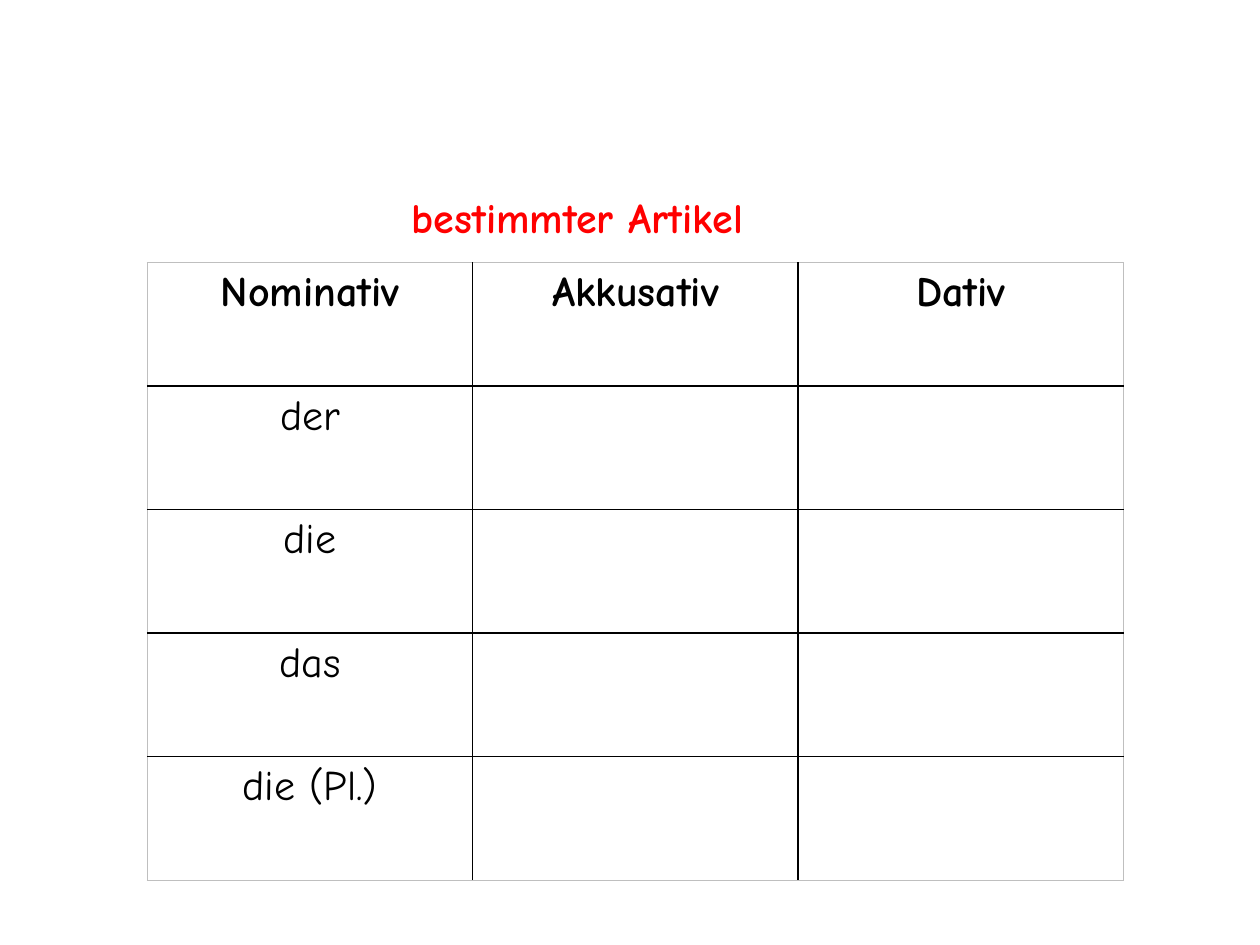
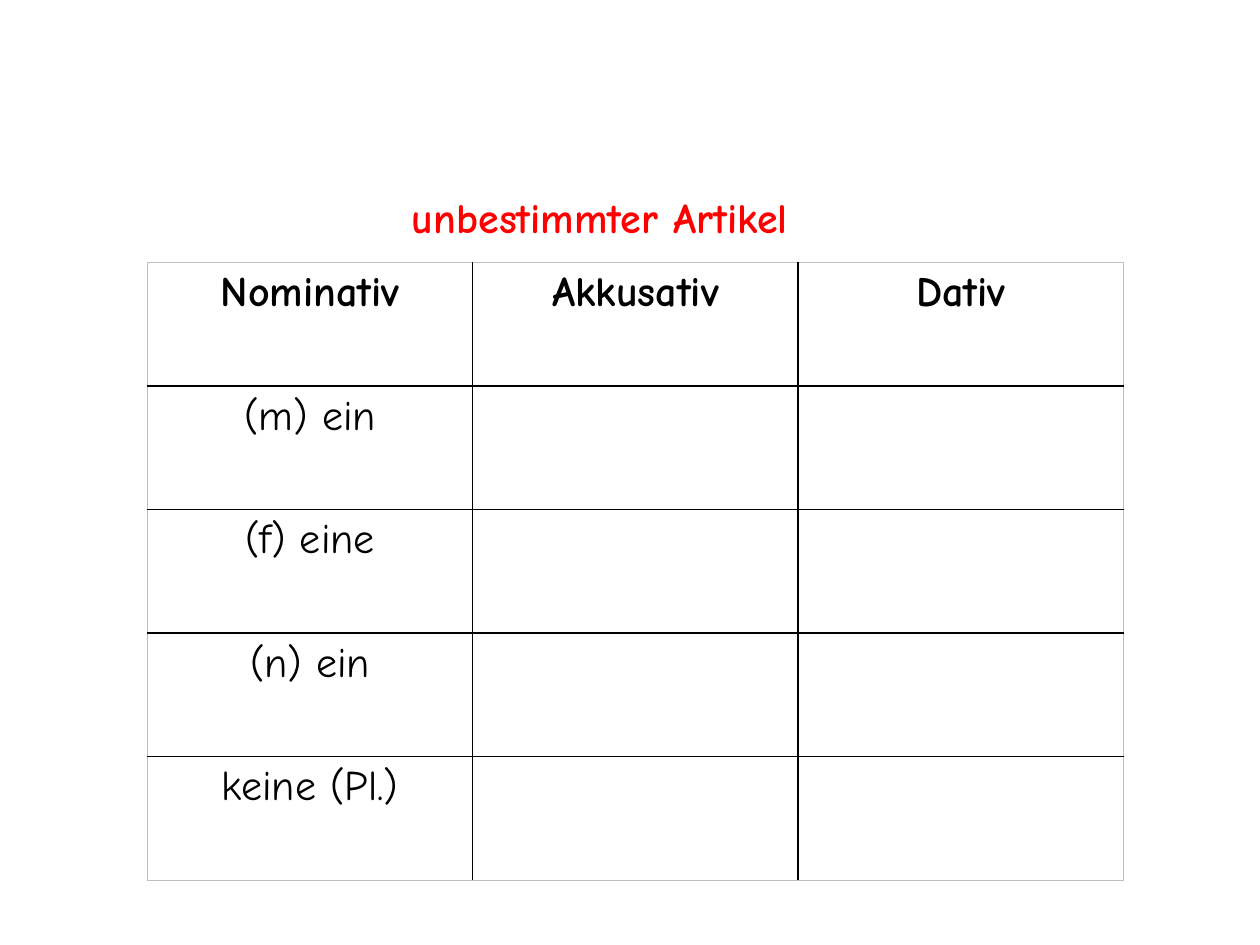
from dataclasses import dataclass

from lxml.etree import SubElement
from pptx import Presentation
from pptx.dml.color import RGBColor
from pptx.enum.text import MSO_ANCHOR, MSO_AUTO_SIZE, PP_ALIGN
from pptx.oxml.ns import qn
from pptx.presentation import Presentation as Deck
from pptx.slide import Slide
from pptx.table import _Cell
from pptx.text.text import _Paragraph
from pptx.util import Cm, Pt

COLORS = {"text": "000000", "title": "FF0000", "grid": "000000", "frame": "BFBFBF"}
FONT = "Comic Neue"
FONT_SIZE = Pt(24)
CASES = ("Nominativ", "Akkusativ", "Dativ")
COLUMN_WIDTH = Cm(6.56)
ROW_HEIGHT = Cm(2.49)
TITLE_ONLY_LAYOUT = 5


@dataclass(frozen=True)
class ArticleSlide:
    title: str
    nominatives: tuple[str, ...]


ARTICLE_SLIDES = (
    ArticleSlide("bestimmter Artikel", ("der", "die", "das", "die (Pl.)")),
    ArticleSlide("unbestimmter Artikel", ("(m) ein", "(f) eine", "(n) ein", "keine (Pl.)")),
)


def format_paragraph(paragraph: _Paragraph, color: str, bold: bool, alignment: PP_ALIGN) -> None:
    paragraph.alignment = alignment
    for run in paragraph.runs:
        run.font.name = FONT
        run.font.size = FONT_SIZE
        run.font.bold = bold
        run.font.color.rgb = RGBColor.from_string(COLORS[color])


def set_borders(cell: _Cell, outer_sides: dict[str, bool]) -> None:
    properties = cell._tc.get_or_add_tcPr()
    for side, is_outer in outer_sides.items():
        width = Pt(0.5) if is_outer else Pt(1)
        line = SubElement(properties, qn(f"a:ln{side}"), w=str(width))
        fill = SubElement(line, qn("a:solidFill"))
        SubElement(fill, qn("a:srgbClr"), val=COLORS["frame" if is_outer else "grid"])


def add_title(slide: Slide, text: str) -> None:
    title = slide.shapes.title
    title.left, title.top, title.width, title.height = Cm(8.05), Cm(3.73), Cm(16.31), Cm(1.27)
    text_frame = title.text_frame
    text_frame.text = text
    text_frame.word_wrap = True
    text_frame.auto_size = MSO_AUTO_SIZE.SHAPE_TO_FIT_TEXT
    text_frame.vertical_anchor = MSO_ANCHOR.TOP
    format_paragraph(text_frame.paragraphs[0], "title", True, PP_ALIGN.LEFT)


def add_case_table(slide: Slide, nominatives: tuple[str, ...]) -> None:
    rows = [CASES] + [(nominative, "", "") for nominative in nominatives]
    last_row, last_column = len(rows) - 1, len(CASES) - 1
    table = slide.shapes.add_table(
        len(rows), len(CASES), Cm(2.97), Cm(5.29),
        COLUMN_WIDTH * len(CASES), ROW_HEIGHT * len(rows),
    ).table
    table.horz_banding = False
    for column in table.columns:
        column.width = COLUMN_WIDTH
    for row_index, texts in enumerate(rows):
        table.rows[row_index].height = ROW_HEIGHT
        for column_index, text in enumerate(texts):
            cell = table.cell(row_index, column_index)
            cell.text_frame.text = text
            format_paragraph(cell.text_frame.paragraphs[0], "text", row_index == 0, PP_ALIGN.CENTER)
            set_borders(cell, {
                "L": column_index == 0,
                "R": column_index == last_column,
                "T": row_index == 0,
                "B": row_index == last_row,
            })
            cell.fill.background()


def add_article_slide(presentation: Deck, article: ArticleSlide) -> None:
    slide = presentation.slides.add_slide(presentation.slide_layouts[TITLE_ONLY_LAYOUT])
    add_case_table(slide, article.nominatives)
    add_title(slide, article.title)


def main() -> None:
    presentation = Presentation()
    presentation.slide_width, presentation.slide_height = Cm(25.4), Cm(19.05)
    for article in ARTICLE_SLIDES:
        add_article_slide(presentation, article)
    presentation.save("out.pptx")


if __name__ == "__main__":
    main()
